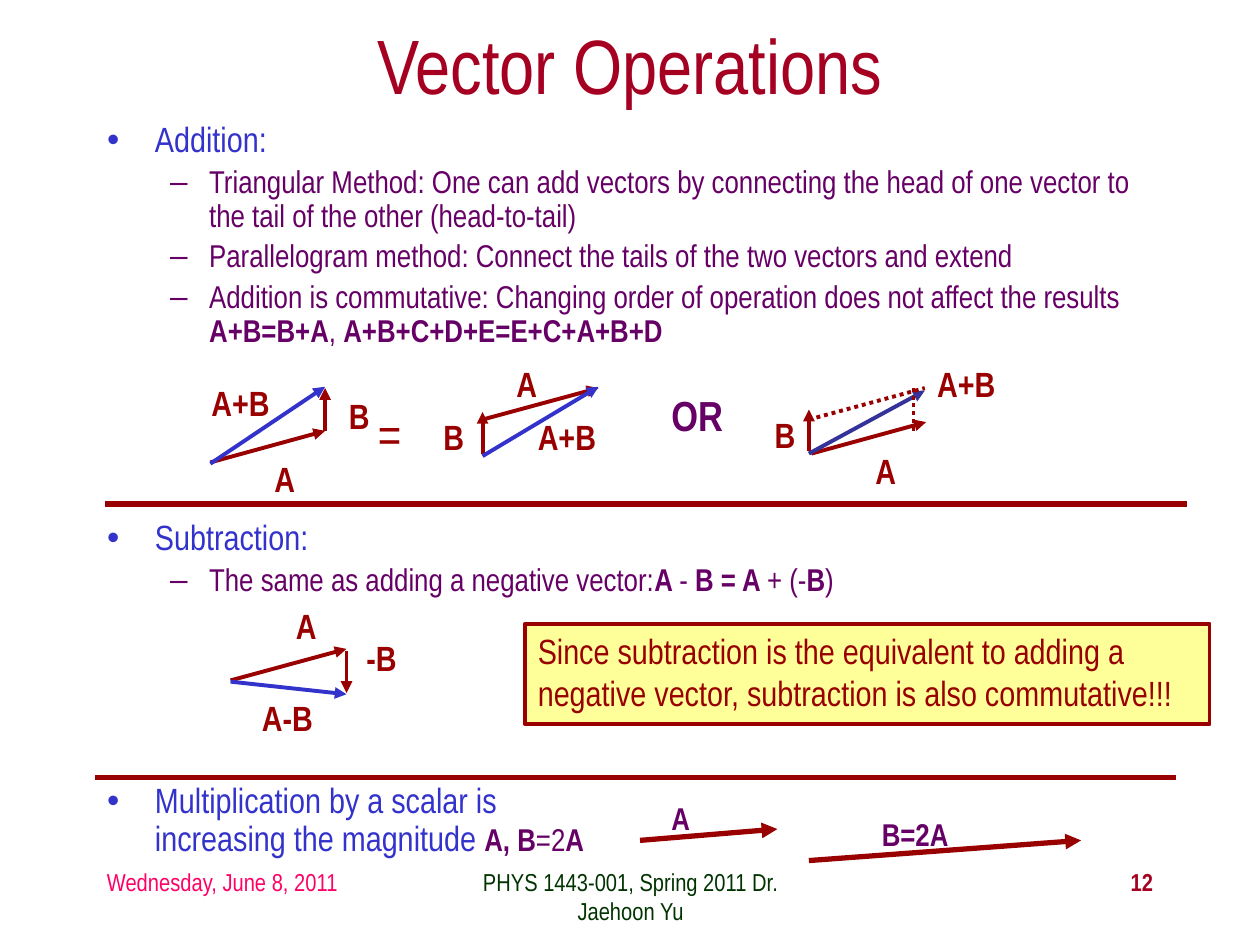
from lxml.etree import SubElement
from pptx import Presentation
from pptx.dml.color import RGBColor
from pptx.enum.dml import MSO_LINE
from pptx.enum.shapes import MSO_CONNECTOR, MSO_SHAPE
from pptx.enum.text import MSO_ANCHOR, MSO_AUTO_SIZE, PP_ALIGN
from pptx.oxml.ns import qn
from pptx.util import Inches, Pt

FONT = "Arial Narrow"
DARK_RED, CRIMSON, BLUE, NAVY, PURPLE = "990000", "A50021", "3333CC", "333399", "660066"

TOPIC = {"size": Pt(20), "bold": False, "color": BLUE}
DETAIL = {"size": Pt(18), "bold": False, "color": PURPLE}
VECTOR = {**DETAIL, "bold": True}
LABEL = {"size": Pt(20), "bold": True, "color": DARK_RED}
FOOTER = {"size": Pt(14), "bold": False}

# Bullet, left margin and hanging indent of each list level
LEVELS = [("•", 0.38, -0.38), ("–", 0.81, -0.31)]

# Each list: box, then paragraphs of (level, runs)
LISTS = [
    ((0.75, 0.92, 8.5, 1.83), [
        (0, [("Addition:", TOPIC)]),
        (1, [("Triangular Method: One can add vectors by connecting the head of "
              "one vector to the tail of the other (head-to-tail)", DETAIL)]),
        (1, [("Parallelogram method: Connect the tails of the two vectors and extend", DETAIL)]),
        (1, [("Addition is commutative: Changing order of operation does not "
              "affect the results ", DETAIL),
             ("A+B=B+A", VECTOR), (", ", DETAIL), ("A+B+C+D+E=E+C+A+B+D", VECTOR)]),
    ]),
    ((0.75, 4.08, 8.5, 0.83), [
        (0, [("Subtraction:", TOPIC)]),
        (1, [("The same as adding a negative vector:", DETAIL), ("A ", VECTOR),
             ("- ", DETAIL), ("B = A ", VECTOR), ("+ (-", DETAIL),
             ("B", VECTOR), (")", DETAIL)]),
    ]),
    ((0.75, 6.17, 4, 0.67), [
        (0, [("Multiplication by a scalar is increasing the magnitude ", TOPIC),
             ("A, B", VECTOR), ("=2", DETAIL), ("A", VECTOR)]),
    ]),
]

# Vectors: tail point, head point, colour, width
VECTORS = [
    # Triangle A then B
    (1.67, 3.67, 2.58, 3.42, DARK_RED, 2.25),
    (2.58, 3.42, 2.58, 3.08, DARK_RED, 2.25),
    (1.67, 3.68, 2.58, 3.07, BLUE, 2.25),
    # Triangle B then A
    (3.83, 3.33, 4.75, 3.08, DARK_RED, 2.25),
    (3.83, 3.6, 3.83, 3.27, DARK_RED, 2.25),
    (3.83, 3.62, 4.75, 3.07, BLUE, 2.25),
    # Parallelogram
    (6.44, 3.6, 7.35, 3.35, DARK_RED, 2.25),
    (6.42, 3.58, 6.42, 3.25, DARK_RED, 2.25),
    (6.42, 3.6, 7.34, 3.1, NAVY, 2.25),
    # Subtraction
    (1.83, 5.4, 2.75, 5.15, DARK_RED, 2.25),
    (2.75, 5.17, 2.75, 5.5, DARK_RED, 2.25),
    (1.83, 5.41, 2.75, 5.51, BLUE, 2.25),
    # Scalar multiples
    (5.08, 6.67, 6.17, 6.58, DARK_RED, 3),
    (6.42, 6.83, 8.58, 6.67, DARK_RED, 3),
]
DOTTED_SIDES = [(7.25, 3.42, 7.25, 3.08), (6.42, 3.33, 7.34, 3.08)]
DIVIDERS = [(0.83, 4, 9.42, 4), (0.75, 6.17, 9.33, 6.17)]

# Labels: text, box, format
LABELS = [
    ("A", (2.08, 3.58, 0.37, 0.43), LABEL),
    ("B", (2.67, 3.08, 0.37, 0.43), LABEL),
    ("A+B", (1.58, 2.98, 0.66, 0.43), LABEL),
    ("=", (2.9, 3.15, 0.39, 0.57), {**LABEL, "size": Pt(28), "bold": False}),
    ("A", (4, 2.83, 0.37, 0.43), LABEL),
    ("B", (3.42, 3.25, 0.37, 0.43), LABEL),
    ("A+B", (4.17, 3.25, 0.66, 0.43), LABEL),
    ("OR", (5.23, 3.04, 0.61, 0.5), {**VECTOR, "size": Pt(24)}),
    ("A", (6.85, 3.52, 0.37, 0.43), LABEL),
    ("B", (6.05, 3.23, 0.37, 0.43), LABEL),
    ("A+B", (7.34, 2.83, 0.66, 0.43), LABEL),
    ("A", (2.25, 4.75, 0.37, 0.43), LABEL),
    ("-B", (2.81, 5, 0.44, 0.43), LABEL),
    ("A-B", (1.98, 5.48, 0.61, 0.43), LABEL),
    ("A", (5.23, 6.29, 0.35, 0.4), VECTOR),
    ("B=2A", (6.9, 6.42, 0.73, 0.4), VECTOR),
]

FOOTERS = [
    ("Wednesday, June 8, 2011", (0.75, 6.83, 2.08, 0.5), PP_ALIGN.LEFT,
     {**FOOTER, "color": "FF0066"}),
    ("PHYS 1443-001, Spring 2011 Dr. Jaehoon Yu", (3.42, 6.83, 3.17, 0.5), PP_ALIGN.CENTER,
     {**FOOTER, "color": "003300"}),
    ("12", (7.17, 6.83, 2.08, 0.5), PP_ALIGN.RIGHT,
     {**FOOTER, "color": CRIMSON, "bold": True}),
]


def rgb(color):
    return RGBColor.from_string(color)


def add_run(paragraph, text, style):
    run = paragraph.add_run()
    run.text = text
    for name, value in {"name": FONT, **style}.items():
        if name == "color":
            run.font.color.rgb = rgb(value)
        else:
            setattr(run.font, name, value)


def place(shape, box):
    for name, value in zip(("left", "top", "width", "height"), box):
        setattr(shape, name, Inches(value))


def set_frame(shape, wrap=True, anchor=MSO_ANCHOR.TOP):
    settings = {"word_wrap": wrap, "auto_size": MSO_AUTO_SIZE.NONE, "vertical_anchor": anchor}
    for name, value in settings.items():
        setattr(shape.text_frame, name, value)
    return shape.text_frame


def fill_list(placeholder, box, items):
    place(placeholder, box)
    frame = set_frame(placeholder)
    for index, (level, runs) in enumerate(items):
        paragraph = frame.add_paragraph() if index else frame.paragraphs[0]
        bullet, margin, indent = LEVELS[level]
        paragraph.level = level
        properties = paragraph._p.get_or_add_pPr()
        properties.set("marL", str(Inches(margin)))
        properties.set("indent", str(Inches(indent)))
        SubElement(properties, qn("a:buChar"), char=bullet)
        paragraph.line_spacing = 0.9
        # Space before is a fifth of the text size
        paragraph.space_before = int(runs[0][1]["size"] * 0.2) if index else Pt(0)
        for text, style in runs:
            add_run(paragraph, text, style)


def add_text(slide, text, box, style, align=PP_ALIGN.LEFT, wrap=False):
    shape = slide.shapes.add_textbox(*map(Inches, box))
    paragraph = set_frame(shape, wrap).paragraphs[0]
    paragraph.alignment = align
    add_run(paragraph, text, style)


def add_line(slide, points, color=DARK_RED, width=3.0, dash=None, arrow=False):
    line = slide.shapes.add_connector(MSO_CONNECTOR.STRAIGHT, *map(Inches, points))
    line.line.color.rgb = rgb(color)
    line.line.width = Pt(width)
    if dash:
        line.line.dash_style = dash
    if arrow:
        SubElement(line.line._get_or_add_ln(), qn("a:tailEnd"), type="triangle")
    SubElement(line._element.spPr, qn("a:effectLst"))


def add_note(slide, text, box):
    shape = slide.shapes.add_shape(MSO_SHAPE.RECTANGLE, *map(Inches, box))
    shape.shadow.inherit = False
    shape.fill.solid()
    shape.fill.fore_color.rgb = rgb("FFFF99")
    shape.line.color.rgb = rgb(DARK_RED)
    shape.line.width = Pt(2.25)
    paragraph = set_frame(shape).paragraphs[0]
    paragraph.alignment = PP_ALIGN.LEFT
    add_run(paragraph, text, {**LABEL, "bold": False})


def main():
    presentation = Presentation()
    presentation.slide_width, presentation.slide_height = Inches(10), Inches(7.5)
    # The comparison layout has a title and four bodies; three are needed
    slide = presentation.slides.add_slide(presentation.slide_layouts[4])
    title, *bodies, unused = slide.placeholders
    unused._element.getparent().remove(unused._element)

    # Title and lists
    place(title, (0.75, 0.17, 8.5, 0.67))
    paragraph = set_frame(title, anchor=MSO_ANCHOR.MIDDLE).paragraphs[0]
    paragraph.alignment = PP_ALIGN.CENTER
    add_run(paragraph, "Vector Operations", {"size": Pt(44), "bold": False, "color": CRIMSON})
    for body, (box, items) in zip(bodies, LISTS):
        fill_list(body, box, items)

    # Dividers and vector diagrams
    for points in DIVIDERS:
        add_line(slide, points)
    for *points, color, width in VECTORS:
        add_line(slide, points, color, width, arrow=True)
    for points in DOTTED_SIDES:
        add_line(slide, points, width=2.25, dash=MSO_LINE.ROUND_DOT)
    for text, box, style in LABELS:
        add_text(slide, text, box, style)

    # Note and footer
    add_note(slide, "Since subtraction is the equivalent to adding a negative vector, "
                    "subtraction is also commutative!!!", (4.17, 4.95, 5.43, 0.8))
    for text, box, align, style in FOOTERS:
        add_text(slide, text, box, style, align, wrap=True)

    presentation.save("out.pptx")


if __name__ == "__main__":
    main()
